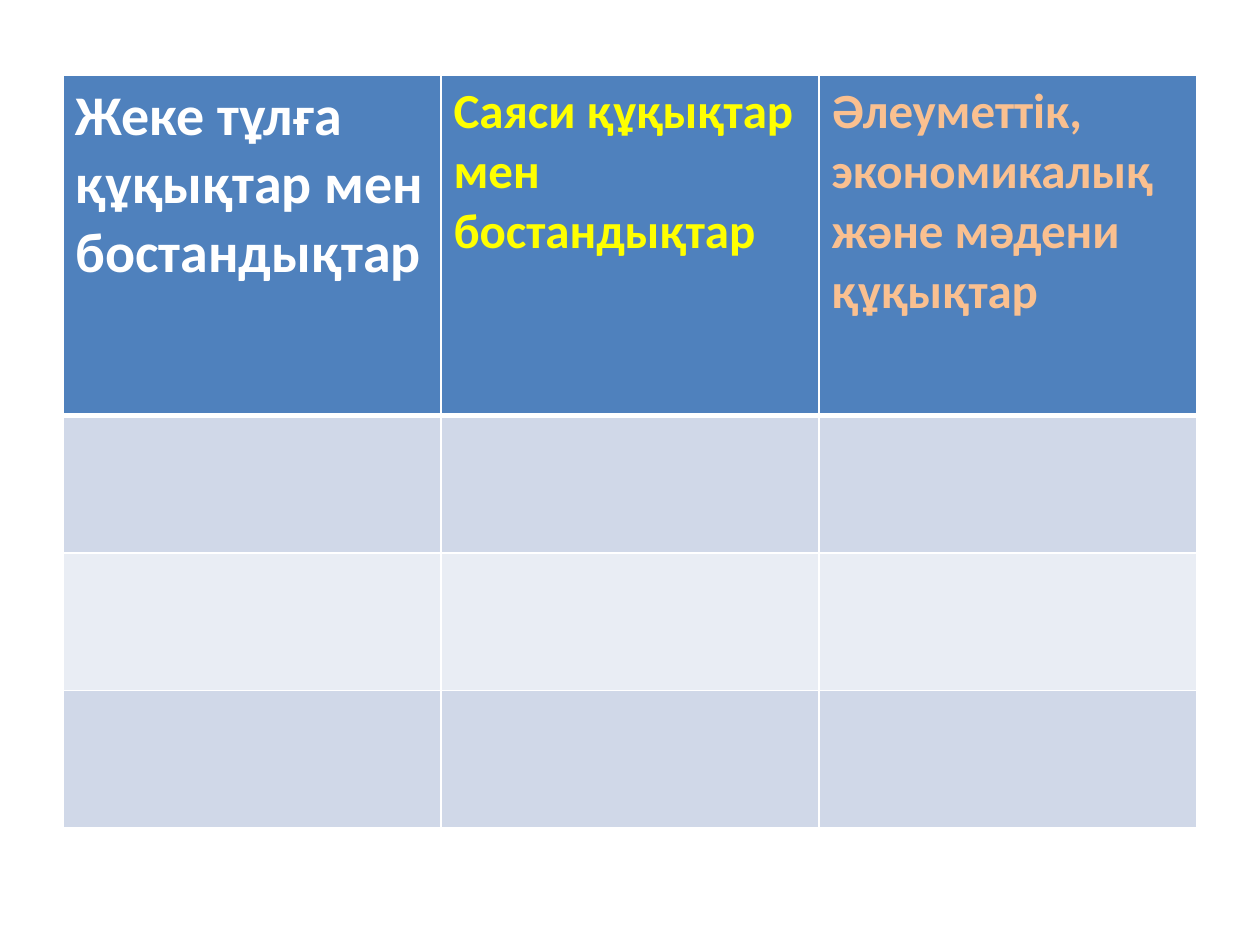
from dataclasses import dataclass

from lxml.etree import SubElement
from pptx import Presentation
from pptx.dml.color import RGBColor
from pptx.oxml.ns import qn
from pptx.table import Table, _Cell
from pptx.util import Inches, Pt

COLORS = {
    "header": "4F81BD",
    "band_dark": "D0D8E8",
    "band_light": "E9EDF4",
    "white": "FFFFFF",
    "yellow": "FFFF00",
    "peach": "FAC090",
}
COLUMN_WIDTH = 3
ROW_HEIGHTS = [2.7, 1.09, 1.09, 1.09]


@dataclass(frozen=True)
class Heading:
    lines: tuple[str, ...]
    size: int
    color: str


HEADINGS = [
    Heading(("Жеке тұлға құқықтар мен бостандықтар",), 32, "white"),
    Heading(("Саяси құқықтар", "мен бостандықтар"), 28, "yellow"),
    Heading(("Әлеуметтік, экономикалық және мәдени құқықтар",), 28, "peach"),
]


def fill_cell(cell: _Cell, color: str) -> None:
    cell.fill.solid()
    cell.fill.fore_color.rgb = RGBColor.from_string(COLORS[color])


def set_borders(cell: _Cell, top: int, bottom: int) -> None:
    """Draw white borders; call before filling, as lines precede the fill."""
    properties = cell._tc.get_or_add_tcPr()
    for side, width in (("L", 1), ("R", 1), ("T", top), ("B", bottom)):
        line = SubElement(properties, qn(f"a:ln{side}"), w=str(Pt(width)))
        solid = SubElement(line, qn("a:solidFill"))
        SubElement(solid, qn("a:srgbClr"), val=COLORS["white"])


def write_heading(cell: _Cell, heading: Heading) -> None:
    cell.text = "\n".join(heading.lines)
    for para in cell.text_frame.paragraphs:
        para.font.name = "Calibri"
        para.font.size = Pt(heading.size)
        para.font.bold = True
        para.font.color.rgb = RGBColor.from_string(COLORS[heading.color])


def format_table(table: Table) -> None:
    for column in table.columns:
        column.width = Inches(COLUMN_WIDTH)
    for index, (row, height) in enumerate(zip(table.rows, ROW_HEIGHTS)):
        row.height = Inches(height)
        band = "band_dark" if index % 2 else "band_light"
        for cell in row.cells:
            set_borders(cell, 3 if index == 1 else 1, 3 if index == 0 else 1)
            fill_cell(cell, band if index else "header")
    for cell, heading in zip(table.rows[0].cells, HEADINGS):
        write_heading(cell, heading)


def main() -> None:
    deck = Presentation()
    deck.slide_width, deck.slide_height = Inches(10), Inches(7.5)
    page = deck.slides.add_slide(deck.slide_layouts[6])
    frame = page.shapes.add_table(
        len(ROW_HEIGHTS), len(HEADINGS), Inches(0.5), Inches(0.6),
        Inches(COLUMN_WIDTH * len(HEADINGS)), Inches(sum(ROW_HEIGHTS)),
    )
    format_table(frame.table)
    deck.save("out.pptx")


if __name__ == "__main__":
    main()
